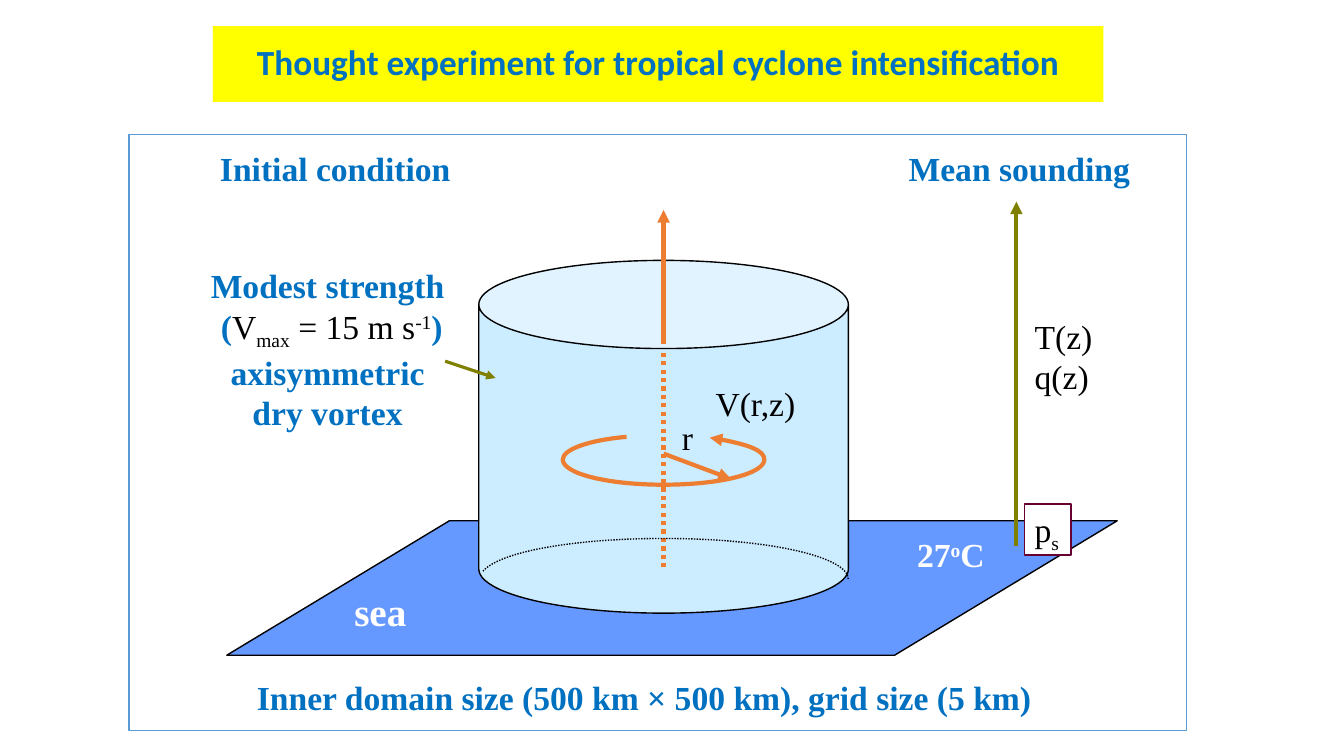
import pptx
import pptx.dml.color
import pptx.enum.dml
import pptx.enum.shapes
import pptx.enum.text
import pptx.oxml
import pptx.oxml.ns
import pptx.util
from dataclasses import dataclass

COLS, ROWS = 160, 90
UNIT = pptx.util.Inches(1 / 12)
KIND = pptx.enum.shapes.MSO_SHAPE
ALIGN = pptx.enum.text.PP_ALIGN
FIT = pptx.enum.text.MSO_AUTO_SIZE
DOTS = pptx.enum.dml.MSO_LINE.ROUND_DOT


@dataclass(frozen=True)
class Theme:
    serif: str = "Times New Roman"
    sans: str = "Calibri"
    blue: str = "0070C0"
    black: str = "000000"
    white: str = "FFFFFF"
    yellow: str = "FFFF00"
    border: str = "5B9BD5"
    sea: str = "6699FF"
    vortex: str = "CCECFF"
    orange: str = "ED7D31"
    olive: str = "808000"
    plum: str = "660033"
    head: float = 25.2
    body: float = 24
    large: float = 28
    thin: float = 1
    mid: float = 2.25
    thick: float = 3


LOOK = Theme()


def grid(*spans):
    """Turn columns and rows into lengths."""
    return [round(span * UNIT) for span in spans]


def rgb(code):
    return pptx.dml.color.RGBColor.from_string(code)


def node(tag):
    return pptx.oxml.parse_xml(f'<{tag} {pptx.oxml.ns.nsdecls("a")}/>')


def paint(shape, code):
    shape.fill.solid()
    shape.fill.fore_color.rgb = rgb(code)


def stroke(shape, code, width, dash=None, start=False, end=False):
    """Style a line; start and end put arrowheads there."""
    shape.line.color.rgb = rgb(code)
    shape.line.width = pptx.util.Pt(width)
    if dash:
        shape.line.dash_style = dash
    for tag, used in (("a:headEnd", start), ("a:tailEnd", end)):
        if used:
            tip = node(tag)
            tip.set("type", "triangle")
            shape.line._get_or_add_ln().append(tip)


def block(slide, kind, box, fill, line, adj=None):
    shape = slide.shapes.add_shape(kind, *grid(*box))
    shape.shadow.inherit = False
    paint(shape, fill)
    stroke(shape, line, LOOK.thin)
    if adj is not None:
        shape.adjustments[0] = adj
    return shape


def line(slide, start, end, code, width, dash=None, arrow=True):
    link = slide.shapes.add_connector(
        pptx.enum.shapes.MSO_CONNECTOR.STRAIGHT, *grid(*start, *end))
    link._element.spPr.append(node("a:effectLst"))
    stroke(link, code, width, dash, end=arrow)


def curve(slide, dots, code, width, dash=None, arrow=False):
    """Draw cubic curves: a start, then two controls and an end for each."""
    dots = [grid(*dot) for dot in dots]
    pen = slide.shapes.build_freeform(*dots[0])
    pen.add_line_segments(dots[1:], close=False)
    shape = pen.convert_to_shape()
    legs = list(shape._element.iter(pptx.oxml.ns.qn("a:lnTo")))
    for i in range(0, len(legs), 3):
        bend = node("a:cubicBezTo")
        legs[i].addprevious(bend)
        for leg in legs[i:i + 3]:
            bend.append(leg[0])
            leg.getparent().remove(leg)
    shape.shadow.inherit = False
    shape.fill.background()
    stroke(shape, code, width, dash, start=arrow)


def write(shape, paras, code, size=LOOK.body, bold=False, wrap=False,
          align=ALIGN.LEFT):
    """Fill in text; a paragraph is a string or a list of (text, shift, plain)."""
    frame = shape.text_frame
    frame.word_wrap = wrap
    frame.auto_size = FIT.SHAPE_TO_FIT_TEXT
    frame.vertical_anchor = pptx.enum.text.MSO_ANCHOR.TOP
    for i, parts in enumerate(paras):
        para = frame.add_paragraph() if i else frame.paragraphs[0]
        para.alignment = align
        font = para.font
        font.name, font.size, font.bold = LOOK.serif, pptx.util.Pt(size), bold
        font.color.rgb = rgb(code)
        if isinstance(parts, str):
            parts = [(parts, 0, False)]
        for text, shift, plain in parts:
            run = para.add_run()
            run.text = text
            if shift:
                run._r.get_or_add_rPr().set("baseline", str(shift * 1000))
            if plain:
                run.font.bold = False
                run.font.color.rgb = rgb(LOOK.black)


def label(slide, box, paras, code, **style):
    write(slide.shapes.add_textbox(*grid(*box)), paras, code, **style)


def title(slide, text):
    shape = slide.shapes.title
    shape.left, shape.top, shape.width, shape.height = grid(25.35, 3.12, 106, 9)
    paint(shape, LOOK.yellow)
    frame = shape.text_frame
    frame.text = text
    frame.auto_size = FIT.NONE
    frame.vertical_anchor = pptx.enum.text.MSO_ANCHOR.MIDDLE
    para = frame.paragraphs[0]
    para.alignment = ALIGN.CENTER
    para.line_spacing = 0.9
    font = para.font
    font.name, font.size, font.bold = LOOK.sans, pptx.util.Pt(LOOK.head), True
    font.color.rgb = rgb(LOOK.blue)


def vortex(slide):
    axis = 79
    block(slide, KIND.CAN, (57, 31, 44, 42), LOOK.vortex, LOOK.black, 0.25)
    line(slide, (axis, 41), (axis, 25), LOOK.orange, LOOK.thick)
    line(slide, (axis, 42), (axis, 68), LOOK.orange, LOOK.thick, DOTS, False)
    rim = [(57.5, 68), (59.6, 65.6), (68.6, 64.1), (axis, 64.1),
           (91.2, 64.1), (101, 66.2), (101, 69)]
    curve(slide, rim, LOOK.black, LOOK.thin, DOTS)
    line(slide, (axis, 54), (87, 57), LOOK.orange, LOOK.thick)
    label(slide, (80, 49, 3.7, 6), ["r"], LOOK.black)
    swirl = [(84.5, 52.1), (88.4, 52.7), (91, 53.6), (91, 54.7),
             (91, 56.4), (85.7, 57.7), (axis, 57.7),
             (72.4, 57.7), (67, 56.4), (67, 54.7),
             (67, 53.5), (70.1, 52.4), (74.6, 52)]
    curve(slide, swirl, LOOK.orange, LOOK.thick, arrow=True)
    label(slide, (84, 45, 12.1, 6), ["V(r,z)"], LOOK.black)


def sounding(slide):
    line(slide, (121, 65), (121, 24), LOOK.olive, LOOK.thick)
    label(slide, (122, 37, 9.4, 10.9), ["T(z)", "q(z)"], LOOK.black)
    base = block(slide, KIND.RECTANGLE, (122, 60, 5.5, 6.1),
                 LOOK.white, LOOK.plum)
    write(base, [[("p", 0, False), ("s", -25, False)]], LOOK.black)


def notes(slide):
    for box, text in (((25, 17, 29.9, 6), "Initial condition"),
                      ((107, 17, 28.8, 6), "Mean sounding"),
                      ((29.4, 80, 97.3, 6),
                       "Inner domain size (500 km × 500 km), grid size (5 km)")):
        label(slide, box, [text], LOOK.blue, bold=True)
    strength = [(" (", 0, False), ("V", 0, True), ("max", -25, True),
                (" = 15 m s", 0, True), ("-1", 30, True),
                (") axisymmetric dry vortex", 0, False)]
    label(slide, (23, 31, 32, 20.6), ["Modest strength", strength], LOOK.blue,
          bold=True, wrap=True, align=ALIGN.CENTER)
    line(slide, (53, 43), (59, 45), LOOK.olive, LOOK.mid)
    label(slide, (41, 69.3, 8.6, 6.8), ["sea"], LOOK.white,
          size=LOOK.large, bold=True)
    warmth = [("27", 0, False), ("o", 30, False), ("C", 0, False)]
    label(slide, (108, 63, 10.7, 6), [warmth], LOOK.white, bold=True)


def main():
    deck = pptx.Presentation()
    deck.slide_width, deck.slide_height = grid(COLS, ROWS)
    slide = deck.slides.add_slide(deck.slide_layouts[5])
    title(slide, "Thought experiment for tropical cyclone intensification")
    block(slide, KIND.RECTANGLE, (15.35, 16, 125.9, 71), LOOK.white, LOOK.border)
    block(slide, KIND.PARALLELOGRAM, (27, 62, 106, 16), LOOK.sea, LOOK.black,
          1.656)
    vortex(slide)
    sounding(slide)
    notes(slide)
    deck.save("out.pptx")


if __name__ == "__main__":
    main()
